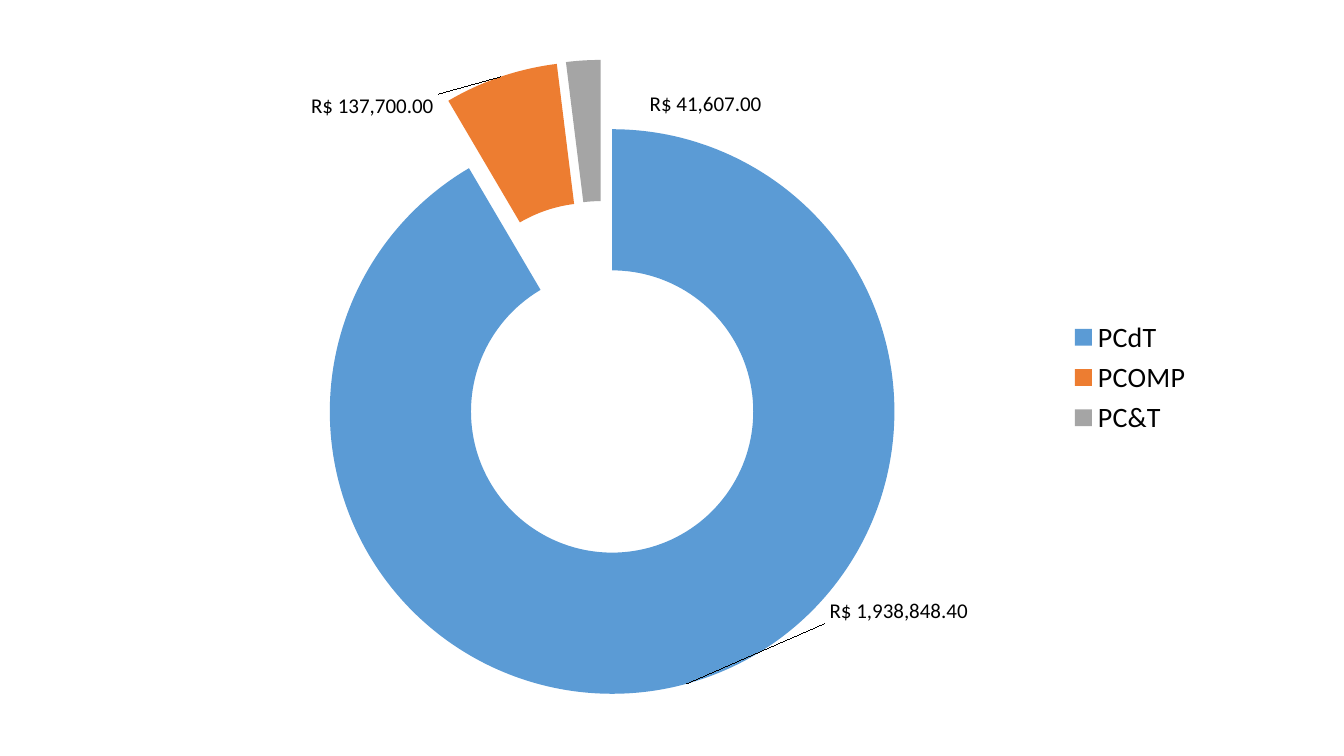
from lxml import etree
from pptx import Presentation
from pptx import util as u
from pptx.chart.data import CategoryChartData
from pptx.dml.color import RGBColor
from pptx.enum import chart as ch
from pptx.oxml import ns

COLORS = {"PCdT": "5B9BD5", "PCOMP": "ED7D31", "PC&T": "A5A5A5", "text": "000000"}
# programme, amount, label shift from the ring's middle (px)
PROGRAMMES = [
    ("PCdT", 1938848.40, (231, -5)),
    ("PCOMP", 137700, (-151, -37)),
    ("PC&T", 41607, (118, -27)),
]
CURRENCY = r"_-[$R$-416]\ * #,##0.00_-"
FRAME = (140, 46, 1063, 663)
FONT, LABEL_SIZE, LEGEND_SIZE = "Calibri", 15, 20
PX = 914400 / 100.8


def px(n):
    return u.Emu(round(n * PX))


def style(font, size):
    font.name, font.size = FONT, u.Pt(size)
    font.color.rgb = RGBColor.from_string(COLORS["text"])


def place_label(label, shift):
    """Move a data label by a shift in px and give it the currency format."""
    idx = label.find(ns.qn("c:idx"))
    layout = etree.Element(ns.qn("c:layout"))
    manual = etree.SubElement(layout, ns.qn("c:manualLayout"))
    for axis, distance, extent in zip("xy", shift, FRAME[2:]):
        etree.SubElement(manual, ns.qn("c:" + axis), val=f"{distance / extent:.4f}")
    number = etree.Element(ns.qn("c:numFmt"), formatCode=CURRENCY, sourceLinked="0")
    idx.addnext(layout)
    layout.addnext(number)


prs = Presentation()
prs.slide_width, prs.slide_height = px(1344), px(756)
s = prs.slides.add_slide(prs.slide_layouts[6])

data = CategoryChartData(number_format=CURRENCY)
data.categories = [name for name, _, _ in PROGRAMMES]
data.add_series("Series 1", [amount for _, amount, _ in PROGRAMMES])
chart = s.shapes.add_chart(
    ch.XL_CHART_TYPE.DOUGHNUT_EXPLODED, *map(px, FRAME), data
).chart
chart.has_title = False
style(chart.font, 10)

chart.has_legend = True
chart.legend.position = ch.XL_LEGEND_POSITION.RIGHT
chart.legend.include_in_layout = False
style(chart.legend.font, LEGEND_SIZE)

plot = chart.plots[0]
plot.vary_by_categories = True
series = plot.series[0]
labels = series.data_labels
labels.show_value = True
labels.number_format, labels.number_format_is_linked = CURRENCY, False
style(labels.font, LABEL_SIZE)

for i, (name, _, _) in enumerate(PROGRAMMES):
    point = series.points[i]
    point.format.fill.solid()
    point.format.fill.fore_color.rgb = RGBColor.from_string(COLORS[name])
    style(point.data_label.font, LABEL_SIZE)

for label, (_, _, shift) in zip(chart.element.iter(ns.qn("c:dLbl")), PROGRAMMES):
    place_label(label, shift)

prs.save("out.pptx")
